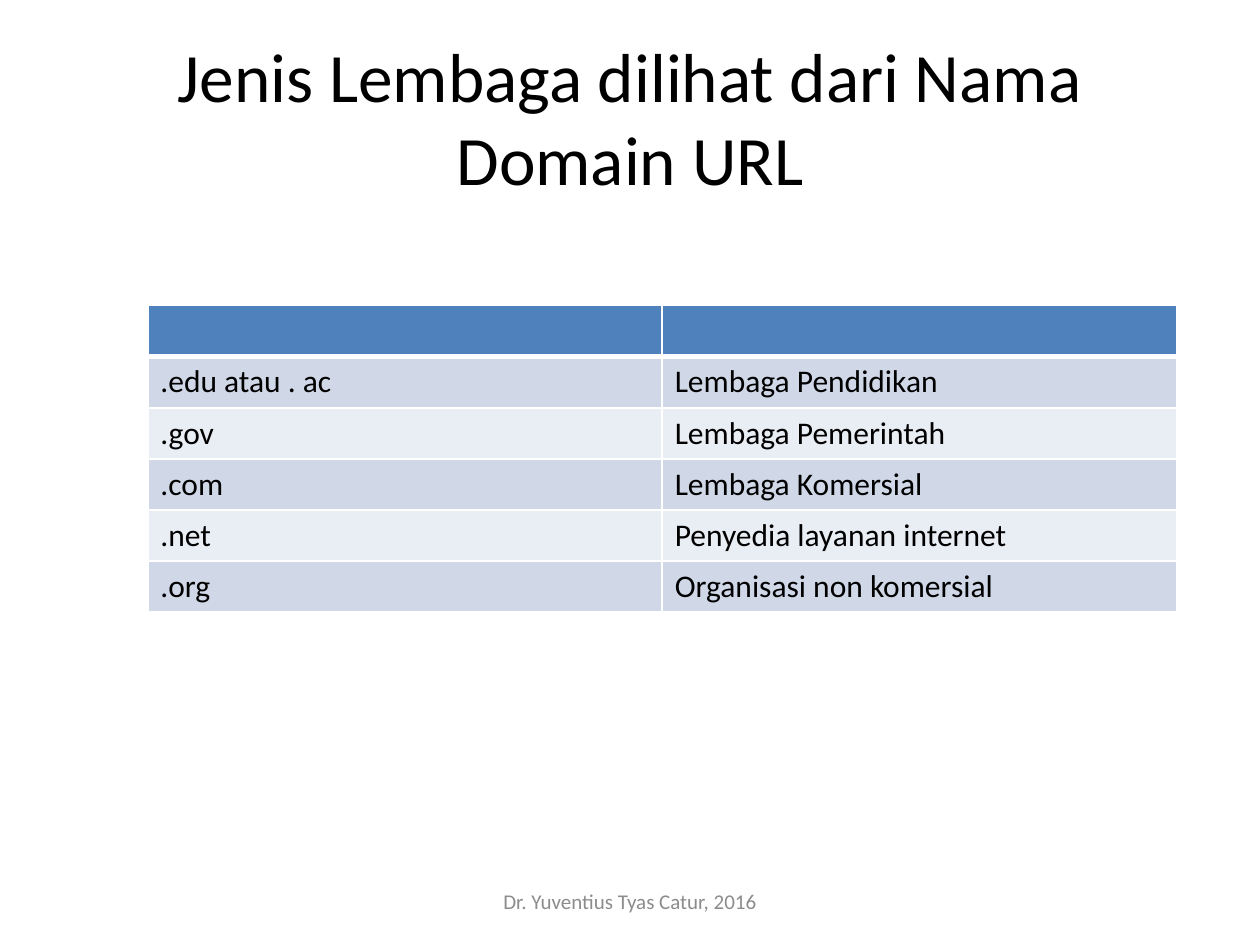
from lxml import etree
from pptx import Presentation
from pptx.dml.color import RGBColor
from pptx.enum.text import MSO_ANCHOR, PP_ALIGN
from pptx.oxml.ns import qn
from pptx.util import Cm, Pt

MIDDLE = MSO_ANCHOR.MIDDLE
CENTER = PP_ALIGN.CENTER
FONT = "Calibri"
COLORS = {
    "text": "000000",
    "footer": "8C8C8C",
    "header": "4F81BD",
    "odd_row": "D0D8E8",
    "even_row": "E9EDF4",
    "border": "FFFFFF",
}
DOMAINS = [
    (".edu atau . ac", "Lembaga Pendidikan"),
    (".gov", "Lembaga Pemerintah"),
    (".com", "Lembaga Komersial"),
    (".net", "Penyedia layanan internet"),
    (".org", "Organisasi non komersial"),
]


def style_paragraph(paragraph, size, color):
    """Set the font of a whole paragraph."""
    paragraph.font.name = FONT
    paragraph.font.size = Pt(size)
    paragraph.font.color.rgb = RGBColor.from_string(COLORS[color])


def add_centered_text(slide, text, left, top, width, height, size, color):
    """Add a wrapped text box centred both ways."""
    box = slide.shapes.add_textbox(Cm(left), Cm(top), Cm(width), Cm(height))
    frame = box.text_frame
    frame.word_wrap = True
    frame.vertical_anchor = MIDDLE
    paragraph = frame.paragraphs[0]
    paragraph.text = text
    paragraph.alignment = CENTER
    style_paragraph(paragraph, size, color)


def set_borders(cell, bottom_width):
    """Draw white cell borders, with a chosen width below."""
    properties = cell._tc.get_or_add_tcPr()
    for side, width in (("L", 1), ("R", 1), ("T", 1), ("B", bottom_width)):
        line = etree.SubElement(properties, qn(f"a:ln{side}"), w=str(Pt(width)))
        fill = etree.SubElement(line, qn("a:solidFill"))
        etree.SubElement(fill, qn("a:srgbClr"), val=COLORS["border"])


def fill_cell(cell, text, fill, bottom_width=1):
    """Give a cell its borders, fill and text."""
    set_borders(cell, bottom_width)
    cell.fill.solid()
    cell.fill.fore_color.rgb = RGBColor.from_string(COLORS[fill])
    paragraph = cell.text_frame.paragraphs[0]
    paragraph.text = text
    style_paragraph(paragraph, 18, "text")


def add_domain_table(slide):
    """Add the table of domains under an empty header row."""
    row_count = len(DOMAINS) + 1
    table = slide.shapes.add_table(
        row_count, 2, Cm(2.98), Cm(6.16), Cm(20.74), Cm(1.03 * row_count)
    ).table
    for header_cell in table.rows[0].cells:
        fill_cell(header_cell, "", "header", bottom_width=3)
    for number, domain in enumerate(DOMAINS, start=1):
        band = "odd_row" if number % 2 else "even_row"
        for cell, text in zip(table.rows[number].cells, domain):
            fill_cell(cell, text, band)


def main():
    """Build and save the slide."""
    presentation = Presentation()
    presentation.slide_width = Cm(25.4)
    presentation.slide_height = Cm(19.05)
    slide = presentation.slides.add_slide(presentation.slide_layouts[6])
    add_centered_text(slide, "Jenis Lembaga dilihat dari Nama Domain URL",
                      1.27, 0.76, 22.86, 3.18, 39.6, "text")
    add_domain_table(slide)
    add_centered_text(slide, "Dr. Yuventius Tyas Catur, 2016",
                      8.68, 17.66, 8.04, 1.01, 12, "footer")
    presentation.save("out.pptx")


if __name__ == "__main__":
    main()
